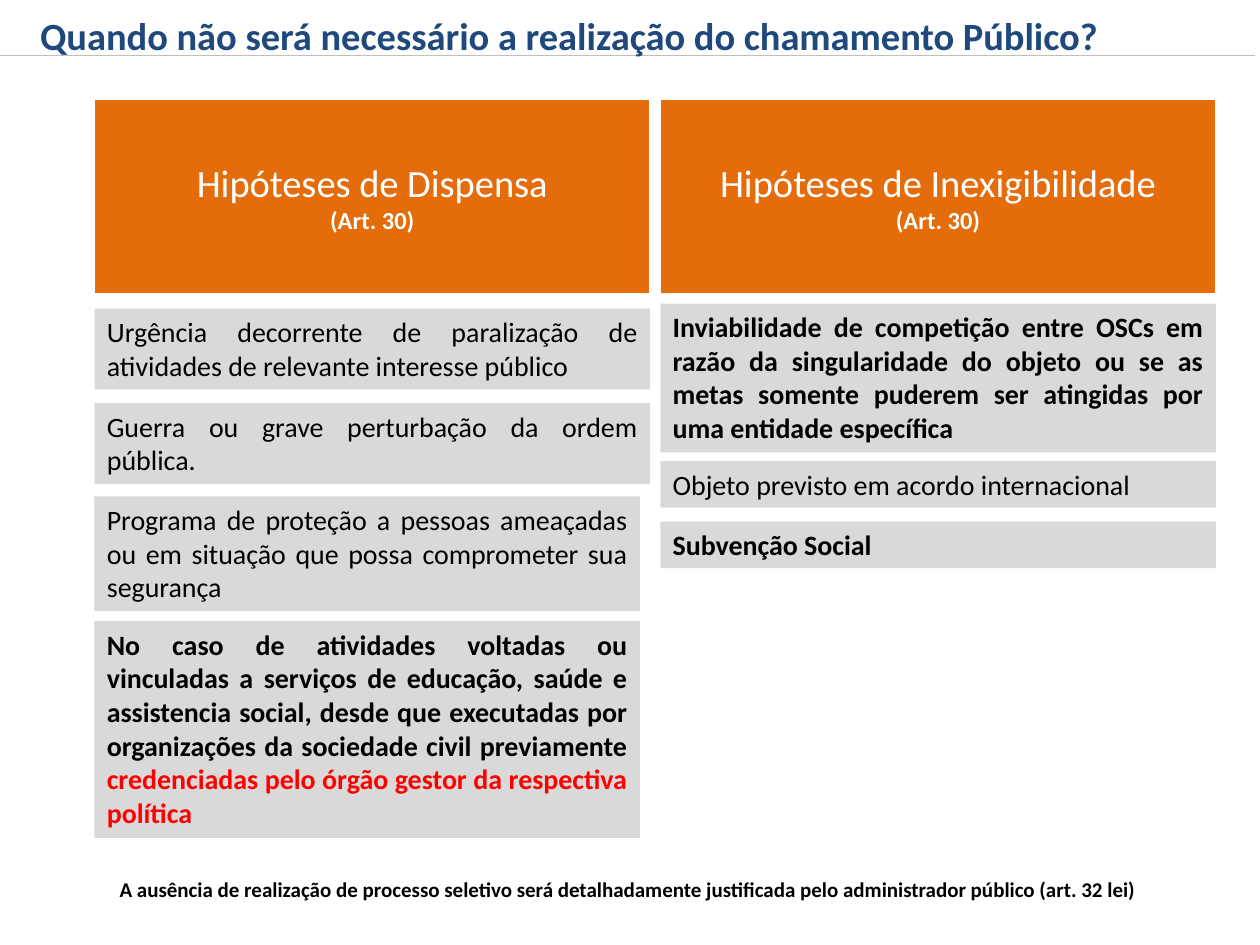
from dataclasses import dataclass
from lxml import etree
from pptx import Presentation
from pptx.dml.color import RGBColor
from pptx.enum.shapes import MSO_CONNECTOR, MSO_SHAPE
from pptx.enum.text import MSO_ANCHOR, MSO_AUTO_SIZE, PP_ALIGN
from pptx.oxml.ns import qn
from pptx.util import Inches, Pt

RECT = MSO_SHAPE.RECTANGLE
LINE = MSO_CONNECTOR.STRAIGHT
TOP, MIDDLE = MSO_ANCHOR.TOP, MSO_ANCHOR.MIDDLE
GROW = MSO_AUTO_SIZE.SHAPE_TO_FIT_TEXT
LEFT, CENTER, JUSTIFY = PP_ALIGN.LEFT, PP_ALIGN.CENTER, PP_ALIGN.JUSTIFY
FONT = "Calibri"
WHITE, BLACK, RED = "FFFFFF", "000000", "FF0000"
NAVY, ORANGE, GREY, RULE = "1F497D", "E46C0A", "D9D9D9", "BFBFBF"
WIDE = 4.41
COLS = (0.75, 5.24)


@dataclass
class Card:
    col: int
    top: float
    width: float
    height: float
    text: str
    bold: bool = False
    alert: str = ""


HEADS = ("Hipóteses de Dispensa", "Hipóteses de Inexigibilidade")
CARDS = (
    Card(0, 2.45, WIDE, 0.64,
         "Urgência decorrente de paralização de atividades de relevante "
         "interesse público"),
    Card(0, 3.2, WIDE, 0.64, "Guerra ou grave perturbação da ordem pública."),
    Card(0, 3.94, 4.33, 0.91,
         "Programa de proteção a pessoas ameaçadas ou em situação que possa "
         "comprometer sua segurança"),
    Card(0, 4.93, 4.33, 1.72,
         "No caso de atividades voltadas ou vinculadas a serviços de educação, "
         "saúde e assistencia social, desde que executadas por organizações da "
         "sociedade civil previamente ", True,
         "credenciadas pelo órgão gestor da respectiva política"),
    Card(1, 2.41, WIDE, 1.18,
         "Inviabilidade de competição entre OSCs em razão da singularidade do "
         "objeto ou se as metas somente puderem ser atingidas por uma entidade "
         "específica", True),
    Card(1, 3.66, WIDE, 0.37, "Objeto previsto em acordo internacional"),
    Card(1, 4.14, WIDE, 0.37, "Subvenção Social", True),
)


def color(code: str) -> RGBColor:
    return RGBColor.from_string(code)


def style(par, size: float, code: str, bold: bool, align=LEFT) -> None:
    par.alignment = align
    par.font.name = FONT
    par.font.size = Pt(size)
    par.font.bold = bold
    par.font.color.rgb = color(code)


def add_box(slide, left: float, top: float, width: float, height: float,
            fill: str):
    box = slide.shapes.add_shape(RECT, Inches(left), Inches(top),
                                 Inches(width), Inches(height))
    box.shadow.inherit = False
    box.fill.solid()
    box.fill.fore_color.rgb = color(fill)
    box.line.fill.background()
    frame = box.text_frame
    frame.word_wrap = True
    frame.vertical_anchor = TOP
    return box


def add_title(slide, text: str) -> None:
    box = slide.shapes.add_textbox(Inches(0.22), Inches(0.05),
                                   Inches(8.71), Inches(0.47))
    frame = box.text_frame
    frame.word_wrap = False
    frame.auto_size = GROW
    par = frame.paragraphs[0]
    par.text = text
    style(par, 22, NAVY, True)


def add_rule(slide) -> None:
    rule = slide.shapes.add_connector(LINE, Inches(-0.04), Inches(0.44),
                                      Inches(9.96), Inches(0.44))
    rule.line.color.rgb = color(RULE)
    rule.line.width = Pt(0.75)
    etree.SubElement(rule._element.spPr, qn("a:effectLst"))


def add_head(slide, left: float, text: str) -> None:
    box = add_box(slide, left, 0.79, WIDE, 1.54, ORANGE)
    box.line.color.rgb = color(WHITE)
    box.line.width = Pt(0.75)
    frame = box.text_frame
    frame.vertical_anchor = MIDDLE
    name = frame.paragraphs[0]
    name.text = text
    style(name, 22, WHITE, False, CENTER)
    law = frame.add_paragraph()
    law.text = "(Art. 30)"
    style(law, 14, WHITE, True, CENTER)


def add_card(slide, card: Card) -> None:
    box = add_box(slide, COLS[card.col], card.top, card.width, card.height,
                  GREY)
    frame = box.text_frame
    frame.auto_size = GROW
    par = frame.paragraphs[0]
    par.text = card.text
    style(par, 16, BLACK, card.bold, JUSTIFY)
    if card.alert:
        par.runs[0].font.color.rgb = color(BLACK)
        run = par.add_run()
        run.text = card.alert
        run.font.color.rgb = color(RED)


def add_note(slide, text: str) -> None:
    frame = add_box(slide, 0.85, 6.91, 8.35, 0.3, WHITE).text_frame
    frame.auto_size = GROW
    par = frame.paragraphs[0]
    par.text = text
    style(par, 12, BLACK, True)


def main() -> None:
    deck = Presentation()
    deck.slide_width, deck.slide_height = Inches(10), Inches(7.5)
    slide = deck.slides.add_slide(deck.slide_layouts[6])
    add_rule(slide)
    add_title(slide, "Quando não será necessário a realização do "
                     "chamamento Público?")
    for left, text in zip(COLS, HEADS):
        add_head(slide, left, text)
    for card in CARDS:
        add_card(slide, card)
    add_note(slide, "A ausência de realização de processo seletivo será "
                    "detalhadamente justificada pelo administrador público "
                    "(art. 32 lei)")
    deck.save("out.pptx")


if __name__ == "__main__":
    main()
